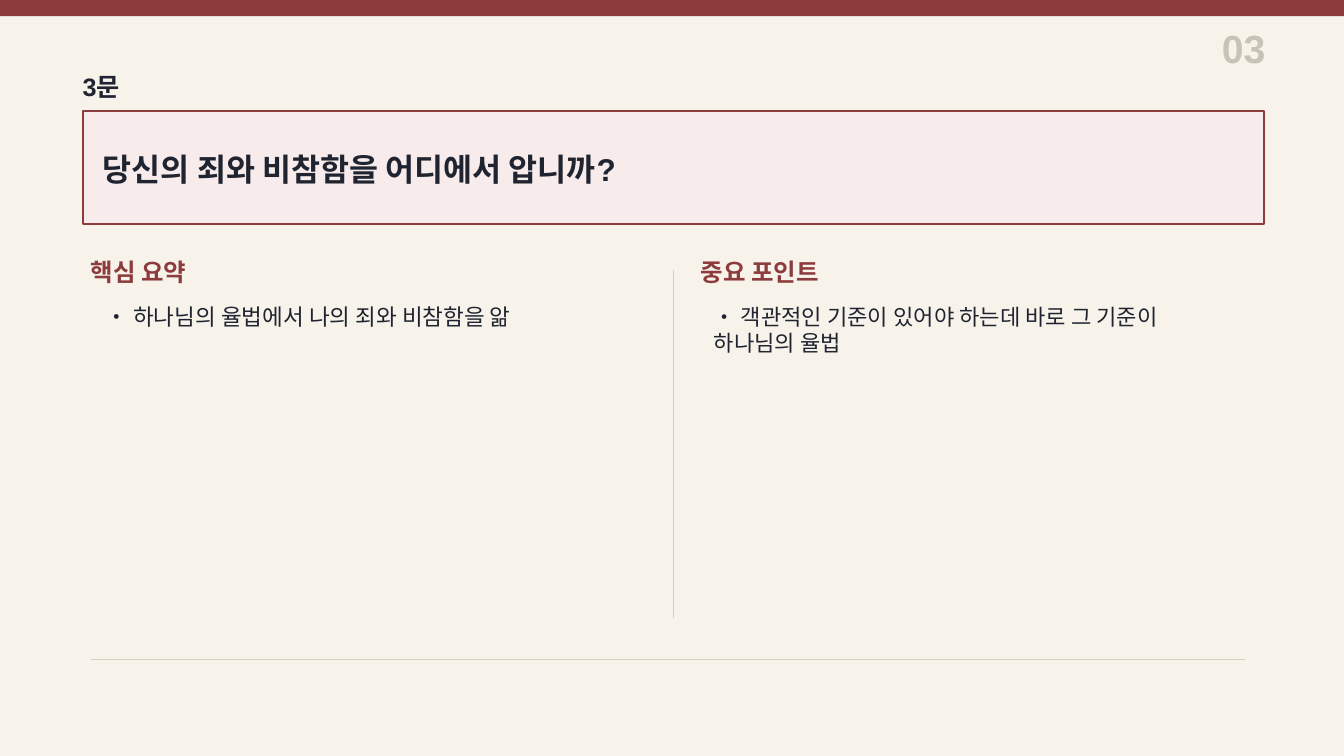
from collections import namedtuple
from dataclasses import dataclass

from lxml.etree import SubElement
from pptx import Presentation
from pptx.dml.color import RGBColor
from pptx.enum.shapes import MSO_CONNECTOR, MSO_SHAPE
from pptx.enum.text import MSO_ANCHOR, MSO_AUTO_SIZE, PP_ALIGN
from pptx.oxml.ns import qn
from pptx.util import Inches, Pt

Box = namedtuple("Box", "left top width height")


@dataclass(frozen=True)
class Theme:
    font: str = "Arial"
    paper: str = "F7F3EB"
    accent: str = "8C3C3C"
    card: str = "F7ECEB"
    ink: str = "1F2430"
    rule: str = "D8D0C2"
    faint: str = "C9C2B7"
    number_size: float = 28
    question_size: float = 22.5
    label_size: float = 18
    heading_size: float = 17.5


THEME = Theme()
SLIDE = Box(0, 0, 13.33, 7.5)


def color(value):
    return RGBColor.from_string(value)


def inches(box):
    return [Inches(length) for length in box]


def write(shape, text, size, ink, bold=True, align=PP_ALIGN.LEFT,
          anchor=MSO_ANCHOR.MIDDLE, insets=(0, 0)):
    """Fill a shape with one formatted paragraph."""
    frame = shape.text_frame
    frame.word_wrap = True
    frame.auto_size = MSO_AUTO_SIZE.NONE
    frame.vertical_anchor = anchor
    frame.margin_left = frame.margin_right = Inches(insets[0])
    frame.margin_top = frame.margin_bottom = Inches(insets[1])
    para = frame.paragraphs[0]
    para.text = text
    para.alignment = align
    para.font.name = THEME.font
    para.font.size = Pt(size)
    para.font.bold = bold
    para.font.color.rgb = color(ink)


def add_text(page, box, *content, **style):
    write(page.shapes.add_textbox(*inches(box)), *content, **style)


def add_panel(page, box, fill, outline=None):
    panel = page.shapes.add_shape(MSO_SHAPE.RECTANGLE, *inches(box))
    panel.shadow.inherit = False
    panel.fill.solid()
    panel.fill.fore_color.rgb = color(fill)
    if outline:
        panel.line.color.rgb = color(outline)
        panel.line.width = Pt(1.2)
    else:
        panel.line.fill.background()
    return panel


def add_rule(page, box):
    """Draw a thin line from the box's top left to its bottom right."""
    ends = (box.left, box.top, box.left + box.width, box.top + box.height)
    rule = page.shapes.add_connector(MSO_CONNECTOR.STRAIGHT, *inches(ends))
    rule.line.color.rgb = color(THEME.rule)
    rule.line.width = Pt(1)
    SubElement(rule.element.spPr, qn("a:effectLst"))


def add_header(page, box, number, label):
    # Top band, page number at the right, question label at the left
    add_panel(page, Box(0, 0, SLIDE.width, 0.16), THEME.accent)
    right = box.left + box.width
    add_text(page, Box(right - 1, box.top, 1, 0.5), number,
             THEME.number_size, THEME.faint, align=PP_ALIGN.RIGHT)
    add_text(page, Box(box.left, box.top + 0.5, 0.9, 0.28), label,
             THEME.label_size, THEME.ink)


def add_question(page, box, question):
    # Outlined card with the slide title in front of it
    card = add_panel(page, box, THEME.card, THEME.accent)
    title = page.shapes.title
    card.element.addnext(title.element)
    title.left, title.top, title.width, title.height = inches(
        Box(box.left + 0.2, box.top + 0.24, box.width - 0.44, 0.68))
    write(title, question, THEME.question_size, THEME.ink)


def add_column(page, box, heading, point, size, indent):
    # Heading above its point
    add_text(page, Box(box.left, box.top, 3, 0.24), heading,
             THEME.heading_size, THEME.accent)
    add_text(page, Box(box.left + indent, box.top + 0.38, box.width, box.height - 0.38),
             point, size, THEME.ink, bold=False,
             anchor=MSO_ANCHOR.TOP, insets=(0.1, 0.05))


def build_question_slide(deck):
    page = deck.slides.add_slide(deck.slide_layouts[5])
    page.background.fill.solid()
    page.background.fill.fore_color.rgb = color(THEME.paper)

    add_header(page, Box(0.82, 0.22, 11.73, 0.78), "03", "3문")
    add_question(page, Box(0.82, 1.1, 11.72, 1.12), "당신의 죄와 비참함을 어디에서 압니까?")

    # Two columns with a divider, closed by a footer rule
    add_rule(page, Box(6.68, 2.68, 0, 3.45))
    add_column(page, Box(0.9, 2.58, 5.38, 1.22), "핵심 요약",
               "• 하나님의 율법에서 나의 죄와 비참함을 앎", 16.1, 0.05)
    add_column(page, Box(6.95, 2.58, 5.38, 1.5), "중요 포인트",
               "• 객관적인 기준이 있어야 하는데 바로 그 기준이 하나님의 율법", 15.8, 0.03)
    add_rule(page, Box(0.9, 6.54, 11.45, 0))


def main():
    deck = Presentation()
    deck.slide_width = Inches(SLIDE.width)
    deck.slide_height = Inches(SLIDE.height)
    build_question_slide(deck)
    deck.save("out.pptx")


if __name__ == "__main__":
    main()
